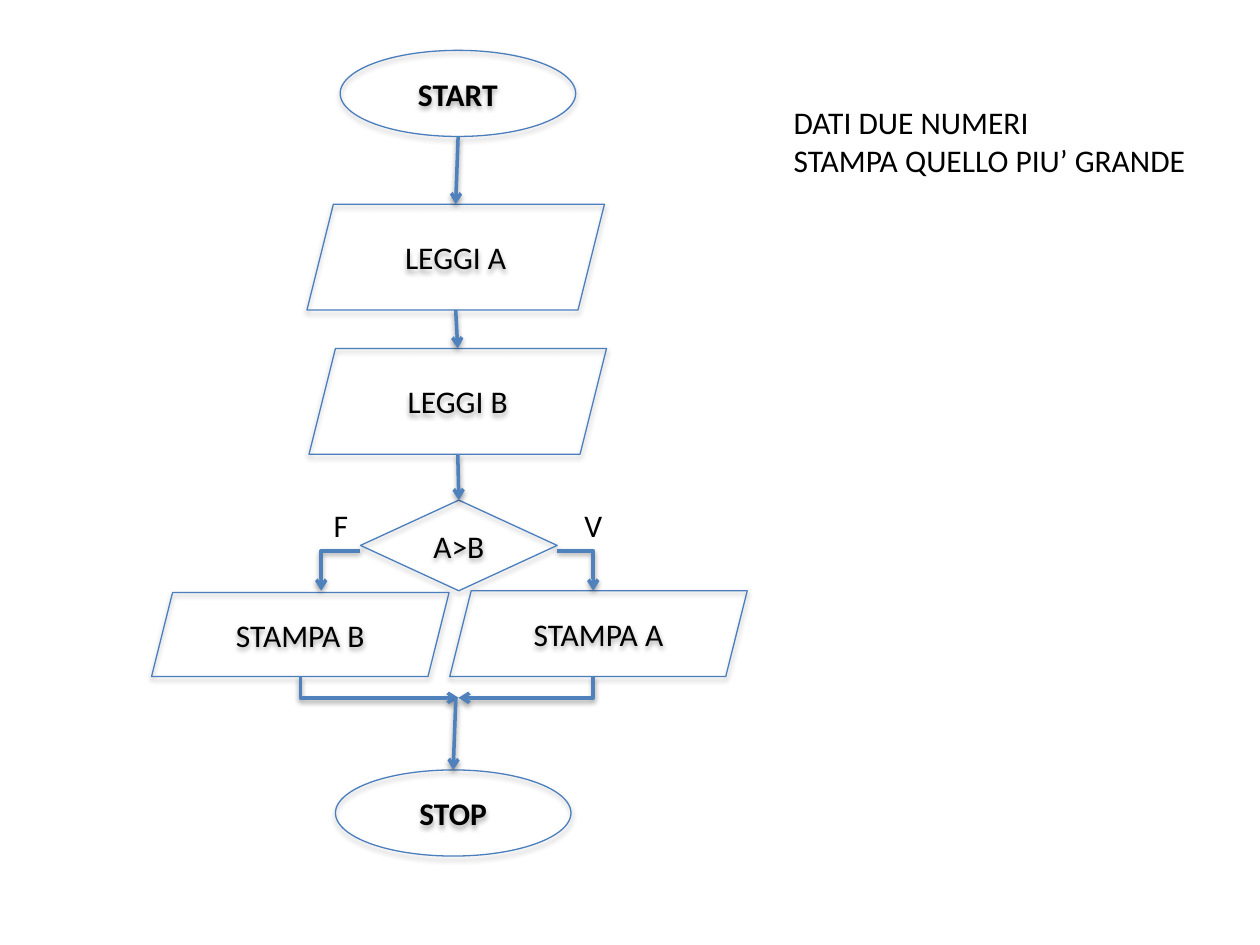
from lxml import etree
from pptx import Presentation, util as u
from pptx.dml import color
from pptx.enum import shapes, text
from pptx.oxml import ns

BLACK, OUTLINE, ARROW = "000000", "4B7EBC", "4F81BD"
TEXT_FORMAT = {"name": "Calibri", "size": u.Pt(18)}
OVAL = shapes.MSO_SHAPE.OVAL
DIAMOND = shapes.MSO_SHAPE.DIAMOND
PARALLELOGRAM = shapes.MSO_SHAPE.PARALLELOGRAM
STRAIGHT = shapes.MSO_CONNECTOR.STRAIGHT
ELBOW = shapes.MSO_CONNECTOR.ELBOW


def points(*values):
    return [u.Pt(value) for value in values]


def set_color(target, value):
    target.rgb = color.RGBColor.from_string(value)


def set_attributes(target, values):
    for name, value in values.items():
        setattr(target, name, value)


def style_line(line, value, width):
    line.fill.solid()
    set_color(line.fill.fore_color, value)
    line.width = u.Pt(width)


def add_child(parent, tag, **attributes):
    return etree.SubElement(parent, ns.qn(tag), **attributes)


def add_shadow(element, distance, opacity):
    properties = element.spPr
    effects = properties.find(ns.qn("a:effectLst"))
    if effects is None:
        effects = add_child(properties, "a:effectLst")
    shadow = add_child(effects, "a:outerShdw", blurRad=str(u.Pt(3.1)), dist=str(u.Pt(distance)),
                       dir="5400000", rotWithShape="0")
    shade = add_child(shadow, "a:srgbClr", val=BLACK)
    add_child(shade, "a:alpha", val=str(opacity * 1000))


def write_lines(frame, lines, alignment, bold=False):
    for index, line in enumerate(lines):
        paragraph = frame.paragraphs[0] if index == 0 else frame.add_paragraph()
        paragraph.alignment = alignment
        run = paragraph.add_run()
        run.text = line
        set_attributes(run.font, {**TEXT_FORMAT, "bold": bold})
        set_color(run.font.color, BLACK)


def add_block(slide, kind, label, left, top, width, height):
    shape = slide.shapes.add_shape(kind, *points(left, top, width, height))
    shape.fill.background()
    style_line(shape.line, OUTLINE, 0.75)
    shape.shadow.inherit = False
    add_shadow(shape._element, 1.8, 35)
    shape.text_frame.vertical_anchor = text.MSO_ANCHOR.MIDDLE
    write_lines(shape.text_frame, [label], text.PP_ALIGN.CENTER, bold=kind == OVAL)
    return shape


def add_label(slide, lines, left, top, width, height):
    box = slide.shapes.add_textbox(*points(left, top, width, height))
    set_attributes(box.text_frame, {"word_wrap": False, "auto_size": text.MSO_AUTO_SIZE.SHAPE_TO_FIT_TEXT})
    write_lines(box.text_frame, lines, text.PP_ALIGN.LEFT)


def add_arrow(slide, kind, start, end, target=None):
    connector = slide.shapes.add_connector(kind, *points(*start, *end))
    if target is not None:
        connector.end_connect(target, 0)
    style_line(connector.line, ARROW, 2)
    add_child(connector.line._get_or_add_ln(), "a:tailEnd", type="arrow")
    add_shadow(connector._element, 1.6, 38)
    return connector


def add_corner(slide, start, end):
    connector = add_arrow(slide, ELBOW, start, end)
    connector._element.spPr.find(ns.qn("a:prstGeom")).set("prst", "bentConnector2")
    return connector


def add_merge(slide, start, end):
    center_x, center_y = (start[0] + end[0]) / 2, (start[1] + end[1]) / 2
    half_width, half_height = (end[1] - start[1]) / 2, abs(end[0] - start[0]) / 2
    rightward = end[0] > start[0]
    side = half_width if rightward else -half_width
    connector = add_corner(slide, (center_x + side, center_y - half_height),
                           (center_x - side, center_y + half_height))
    turn = 270 if rightward else 90
    connector._element.spPr.find(ns.qn("a:xfrm")).set("rot", str(turn * 60000))


def main():
    presentation = Presentation()
    set_attributes(presentation, {"slide_width": u.Pt(720), "slide_height": u.Pt(540)})
    slide = presentation.slides.add_slide(presentation.slide_layouts[6])

    add_block(slide, OVAL, "START", 194.4, 28.8, 134.6, 49.2)
    stop = add_block(slide, OVAL, "STOP", 191.7, 440, 134.6, 49.2)
    test = add_block(slide, DIAMOND, "A>B", 206, 285.8, 112.4, 51.8)
    for label, left, top, height in (
        ("LEGGI A", 175.4, 116.7, 60.4),
        ("LEGGI B", 176.6, 199.1, 60.4),
        ("STAMPA A", 257, 337.6, 49),
        ("STAMPA B", 86.6, 338.6, 48),
    ):
        add_block(slide, PARALLELOGRAM, label, left, top, 170, height)

    for start, end in (((318.4, 314.8), (339, 337.6)), ((206, 314.8), (183.6, 337.6))):
        add_corner(slide, start, end)
    for start_x in (339, 171.6):
        add_merge(slide, (start_x, 386.6), (262, 398.8))
    for start, end, target in (
        ((261.8, 78), (260.4, 116.7), None),
        ((260.4, 177.1), (261.6, 199.1), None),
        ((261.6, 259.5), (262.2, 285.8), test),
        ((260.5, 398.8), (259, 440), stop),
    ):
        add_arrow(slide, STRAIGHT, start, end, target)

    add_label(slide, ["F"], 183.6, 285.8, 22.8, 29.1)
    add_label(slide, ["V"], 326.9, 285.8, 25, 29.1)
    add_label(slide, ["DATI DUE NUMERI", "STAMPA QUELLO PIU’ GRANDE"], 446.4, 55.5, 240.5, 50.9)
    presentation.save("out.pptx")


if __name__ == "__main__":
    main()
